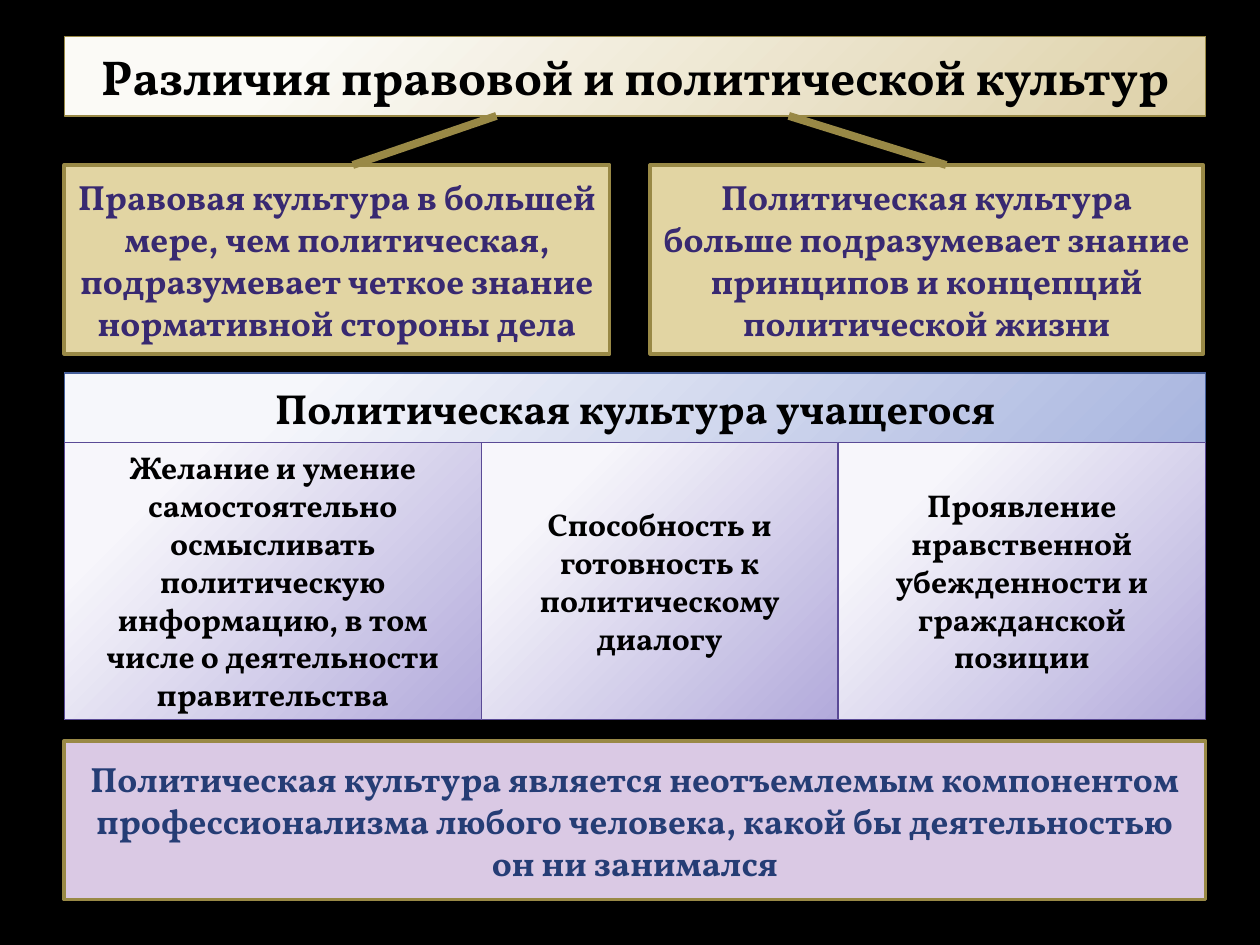
from lxml.etree import SubElement
from pptx import Presentation
from pptx.dml.color import RGBColor
from pptx.enum.shapes import MSO_CONNECTOR, MSO_SHAPE
from pptx.enum.text import MSO_ANCHOR, PP_ALIGN
from pptx.oxml.ns import qn
from pptx.util import Inches, Pt

FONT = "Vollkorn"
BLACK = RGBColor(0x00, 0x00, 0x00)
GOLD = RGBColor(0x99, 0x89, 0x46)
SAND = RGBColor(0xE2, 0xD5, 0xA3)
LILAC = RGBColor(0xDA, 0xC9, 0xE4)
INDIGO = RGBColor(0x38, 0x29, 0x71)
NAVY = RGBColor(0x25, 0x3D, 0x75)
BLUE_LINE = RGBColor(0x46, 0x5F, 0x9A)
VIOLET_LINE = RGBColor(0x5A, 0x4A, 0x96)
SAND_GLOW = (RGBColor(0xFB, 0xFA, 0xF6), RGBColor(0xDE, 0xD1, 0xA8))
BLUE_GLOW = (RGBColor(0xF6, 0xF7, 0xFB), RGBColor(0xA8, 0xB5, 0xDF))
VIOLET_GLOW = (RGBColor(0xF7, 0xF6, 0xFB), RGBColor(0xB2, 0xAA, 0xDB))

LEFT, WIDTH = 0.51, 9.06
COLUMN_WIDTHS = (3.31, 2.83, 2.92)
DIFFERENCES = (
    "Правовая культура в большей мере, чем политическая, "
    "подразумевает четкое знание нормативной стороны дела",
    "Политическая культура больше подразумевает знание "
    "принципов и концепций политической жизни",
)
QUALITIES = (
    "Желание и умение самостоятельно осмысливать политическую "
    "информацию, в том числе о деятельности правительства",
    "Способность и готовность к политическому диалогу",
    "Проявление нравственной убежденности и гражданской позиции",
)
CONCLUSION = (
    "Политическая культура является неотъемлемым компонентом "
    "профессионализма любого человека, какой бы деятельностью он ни занимался"
)


def write_text(shape, text, size, color=BLACK):
    frame = shape.text_frame
    frame.word_wrap = True
    frame.vertical_anchor = MSO_ANCHOR.MIDDLE
    para = frame.paragraphs[0]
    para.alignment = PP_ALIGN.CENTER
    span = para.add_run()
    span.text = text
    span.font.name = FONT
    span.font.size = Pt(size)
    span.font.bold = True
    span.font.color.rgb = color


def fill_with_glow(shape, colors):
    """Fill with a circular gradient that spreads from the top left."""
    shape.fill.gradient()
    for stop, position, color in zip(shape.fill.gradient_stops, (0.2, 1), colors):
        stop.position = position
        stop.color.rgb = color
    gradient = shape.element.spPr.find(qn("a:gradFill"))
    gradient.remove(gradient.find(qn("a:lin")))
    circle = SubElement(gradient, qn("a:path"), path="circle")
    SubElement(circle, qn("a:fillToRect"),
               l="-15000", t="-15000", r="115000", b="115000")


def format_panel(shape, text, *, fill, line, size, line_width=0.75, color=BLACK):
    if isinstance(fill, RGBColor):
        shape.fill.solid()
        shape.fill.fore_color.rgb = fill
    else:
        fill_with_glow(shape, fill)
    shape.line.color.rgb = line
    shape.line.width = Pt(line_width)
    write_text(shape, text, size=size, color=color)


def add_panel(page, box, text, **style):
    left, top, width, height = map(Inches, box)
    panel = page.shapes.add_shape(MSO_SHAPE.RECTANGLE, left, top, width, height)
    panel.shadow.inherit = False
    format_panel(panel, text, **style)


def place_title(page, box):
    title = page.shapes.title
    title.left, title.top, title.width, title.height = map(Inches, box)
    format_panel(title, "Различия правовой и политической культур",
                 fill=SAND_GLOW, line=GOLD, size=28)


def add_branch(page, start, end):
    branch = page.shapes.add_connector(
        MSO_CONNECTOR.STRAIGHT, *map(Inches, start + end))
    branch.line.color.rgb = GOLD
    branch.line.width = Pt(4.5)
    SubElement(branch.element.spPr, qn("a:effectLst"))


def add_differences(page, box, title_bottom):
    left, top, width, height = box
    boxes = ((left, top, 4.33, height), (left + 4.65, top, width - 4.65, height))
    for text, panel_box in zip(DIFFERENCES, boxes):
        add_panel(page, panel_box, text, fill=SAND, line=GOLD,
                  line_width=2, size=20, color=INDIGO)
    for start, end in ((3.94, 2.8), (6.26, 7.51)):
        add_branch(page, (start, title_bottom), (end, top))


def add_student_culture(page, box, header_height=0.55):
    left, top, width, height = box
    add_panel(page, (left, top, width, header_height),
              "Политическая культура учащегося",
              fill=BLUE_GLOW, line=BLUE_LINE, size=24)
    for text, column_width in zip(QUALITIES, COLUMN_WIDTHS):
        add_panel(page,
                  (left, top + header_height, column_width, height - header_height),
                  text, fill=VIOLET_GLOW, line=VIOLET_LINE, size=18)
        left += column_width


def add_conclusion(page, box):
    add_panel(page, box, CONCLUSION, fill=LILAC, line=GOLD,
              line_width=2, size=20, color=NAVY)


def main():
    deck = Presentation()
    deck.slide_width, deck.slide_height = Inches(10), Inches(7.5)
    page = deck.slides.add_slide(deck.slide_layouts[5])
    page.background.fill.solid()
    page.background.fill.fore_color.rgb = BLACK

    place_title(page, (LEFT, 0.29, WIDTH, 0.63))
    add_differences(page, (LEFT, 1.31, 9.04, 1.5), title_bottom=0.92)
    add_student_culture(page, (LEFT, 2.96, WIDTH, 2.75))
    add_conclusion(page, (LEFT, 5.88, WIDTH, 1.26))
    deck.save("out.pptx")


if __name__ == "__main__":
    main()
